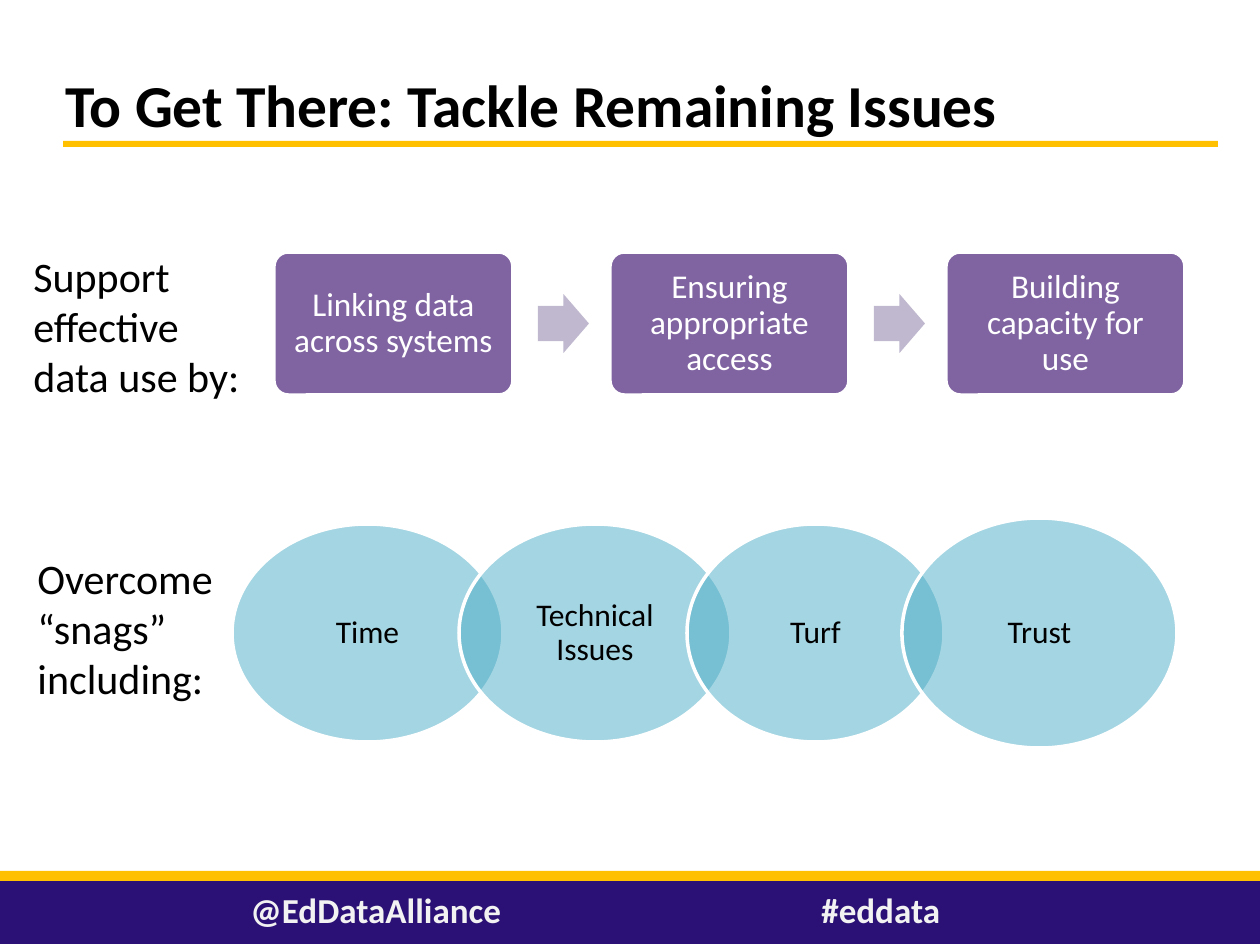
"""Build a slide on linking education data and the snags to overcome."""
from dataclasses import dataclass

from lxml import etree
from pptx import Presentation
from pptx.dml.color import RGBColor
from pptx.enum.shapes import MSO_SHAPE
from pptx.enum.text import MSO_ANCHOR, PP_ALIGN
from pptx.oxml.ns import qn
from pptx.util import Emu, Pt

RECTANGLE = MSO_SHAPE.RECTANGLE
ROUNDED = MSO_SHAPE.ROUNDED_RECTANGLE
ARROW = MSO_SHAPE.RIGHT_ARROW
OVAL = MSO_SHAPE.OVAL
MIDDLE = MSO_ANCHOR.MIDDLE
TOP = MSO_ANCHOR.TOP
CENTER = PP_ALIGN.CENTER

BLANK_LAYOUT = 6
EMU_PER_PX = 914400 / 126


@dataclass(frozen=True)
class Theme:
    font: str = "Calibri"
    black: str = "000000"
    white: str = "FFFFFF"
    gold: str = "FFC000"
    navy: str = "2B1175"
    purple: str = "8064A2"
    lilac: str = "C0B8CE"
    aqua: str = "4BACC6"
    footer_text: str = "F2F2F2"
    title_size: int = 34
    label_size: int = 24
    footer_size: int = 20
    step_size: int = 19
    snag_size: int = 18


def px(length):
    return Emu(round(length * EMU_PER_PX))


class SlideBuilder:
    def __init__(self, slide, theme):
        self.slide = slide
        self.theme = theme

    def add_text_run(self, shape, text, size, color, bold=False):
        paragraph = shape.text_frame.paragraphs[0]
        run = paragraph.add_run()
        run.text = text
        run.font.name = self.theme.font
        run.font.size = Pt(size)
        run.font.bold = bold
        run.font.color.rgb = RGBColor.from_string(color)
        return paragraph

    def text(self, box, text, size, color, bold=False, wrap=True, anchor=TOP):
        shape = self.slide.shapes.add_textbox(*map(px, box))
        shape.text_frame.word_wrap = wrap
        shape.text_frame.vertical_anchor = anchor
        self.add_text_run(shape, text, size, color, bold)

    def shape(self, kind, box, fill, outlined=False, adjustments=()):
        shape = self.slide.shapes.add_shape(kind, *map(px, box))
        shape.shadow.inherit = False
        shape.fill.solid()
        shape.fill.fore_color.rgb = RGBColor.from_string(fill)
        if outlined:
            shape.line.color.rgb = RGBColor.from_string(self.theme.white)
            shape.line.width = Pt(2)
        else:
            shape.line.fill.background()
        for index, value in enumerate(adjustments):
            shape.adjustments[index] = value
        return shape

    def caption(self, shape, text, size, color, side, edge):
        frame = shape.text_frame
        frame.word_wrap = True
        frame.vertical_anchor = MIDDLE
        frame.margin_left = frame.margin_right = px(side)
        frame.margin_top = frame.margin_bottom = px(edge)
        paragraph = self.add_text_run(shape, text, size, color)
        paragraph.alignment = CENTER
        paragraph.line_spacing = 0.9

    def step(self, box, text):
        shape = self.shape(ROUNDED, box, self.theme.purple, True, (0.1,))
        self.caption(shape, text, self.theme.step_size, self.theme.white, 10, 10)

    def arrow(self, box):
        self.shape(ARROW, box, self.theme.lilac, adjustments=(0.6, 0.5))

    def snag(self, box, text):
        shape = self.shape(OVAL, box, self.theme.aqua, True)
        properties = shape.element.find(qn("p:spPr"))
        color = properties.find(qn("a:solidFill"))[0]
        etree.SubElement(color, qn("a:alpha")).set("val", "50000")
        self.caption(shape, text, self.theme.snag_size, self.theme.black, 13, 4)


def main():
    theme = Theme()
    presentation = Presentation()
    presentation.slide_width = px(1260)
    presentation.slide_height = px(945)
    slide = presentation.slides.add_slide(presentation.slide_layouts[BLANK_LAYOUT])
    builder = SlideBuilder(slide, theme)

    for box, fill in (
        ((63, 141, 1155, 6), theme.gold),
        ((0, 877, 1260, 67), theme.navy),
        ((0, 871, 1260, 10), theme.gold),
    ):
        builder.shape(RECTANGLE, box, fill)

    builder.text((53, 19, 1176, 170), "To Get There: Tackle Remaining Issues",
                 theme.title_size, theme.black, bold=True, anchor=MIDDLE)
    for box, text in (
        ((809, 882, 145, 55), "#eddata"),
        ((238, 882, 307, 55), "@EdDataAlliance"),
    ):
        builder.text(box, text, theme.footer_size, theme.footer_text,
                     bold=True, wrap=False)

    steps = ("Linking data across systems", "Ensuring appropriate access",
             "Building capacity for use")
    step_pitch = 336
    for index, text in enumerate(steps):
        offset = index * step_pitch
        builder.step((274 + offset, 252, 239, 143), text)
        if index < len(steps) - 1:
            builder.arrow((538 + offset, 294, 51, 59))

    for box, text in (
        ((21, 244, 244, 165), "Support effective data use by:"),
        ((25, 546, 244, 165), "Overcome “snags” including:"),
    ):
        builder.text(box, text, theme.label_size, theme.black)

    snag_middle = 633
    for left, width, height, text in (
        (232, 271, 218, "Time"),
        (459, 272, 218, "Technical Issues"),
        (687, 257, 218, "Turf"),
        (902, 275, 230, "Trust"),
    ):
        builder.snag((left, snag_middle - height // 2, width, height), text)

    presentation.save("out.pptx")


if __name__ == "__main__":
    main()
